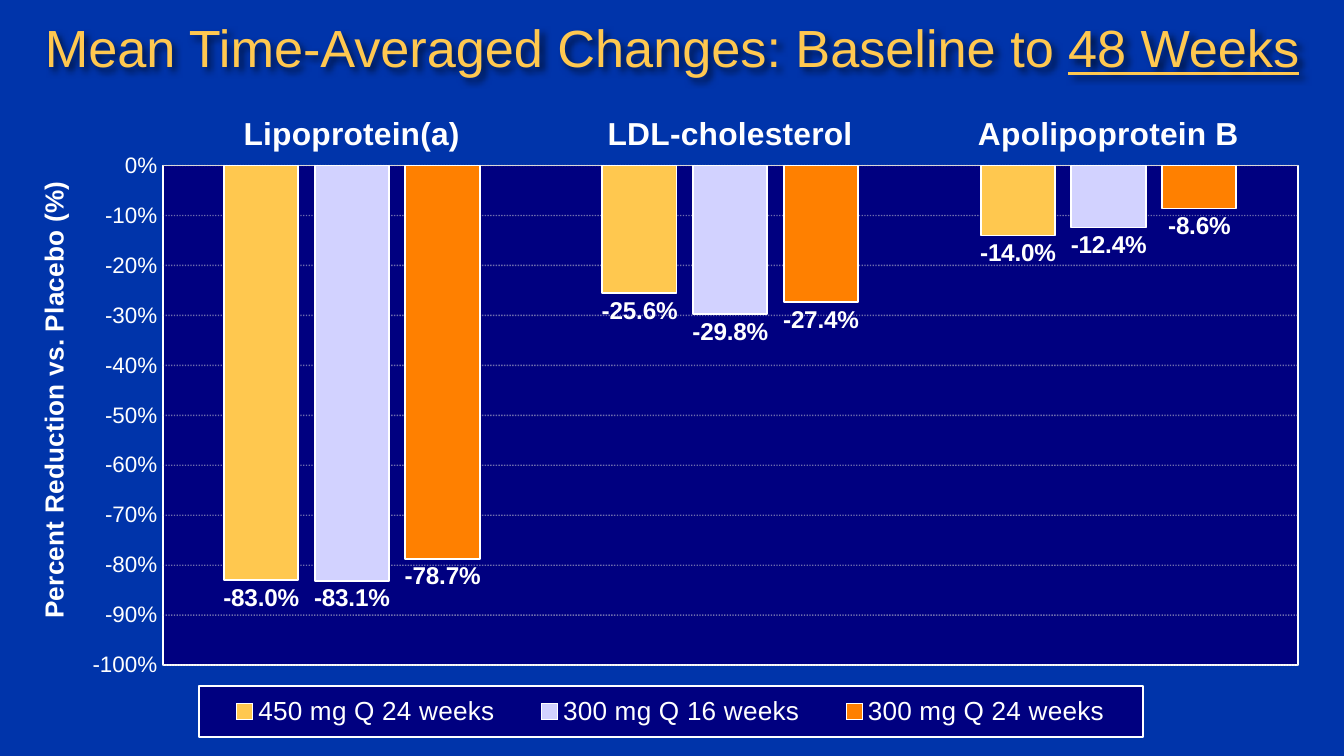
"""Build a slide with a clustered column chart of lipid changes over 48 weeks."""
from pptx import Presentation
from pptx.chart.data import CategoryChartData
from pptx.dml.color import RGBColor
from pptx.enum.chart import XL_CHART_TYPE as ChartType, XL_LABEL_POSITION as LabelPosition
from pptx.enum.chart import XL_LEGEND_POSITION as LegendPosition, XL_TICK_LABEL_POSITION as TickLabels
from pptx.enum.chart import XL_TICK_MARK as TickMark
from pptx.enum.dml import MSO_LINE as Dash
from pptx.enum.text import MSO_ANCHOR as Anchor, PP_ALIGN as Align
from pptx.oxml import parse_xml
from pptx.oxml.ns import nsdecls, qn
from pptx.util import Inches, Pt

WHITE, NAVY, GOLD, GRAY = "FFFFFF", "000080", "FFC850", "D9D9D9"
PANEL = (
    f'<c:spPr {nsdecls("c", "a")}><a:solidFill><a:srgbClr val="{NAVY}"/></a:solidFill>'
    f'<a:ln w="12700"><a:solidFill><a:srgbClr val="{WHITE}"/></a:solidFill></a:ln></c:spPr>'
)


def style_font(font, size, color=WHITE, bold=False):
    font.name, font.size, font.bold = "Arial", Pt(size), bold
    font.color.rgb = RGBColor.from_string(color)


def place(element, index, **shares):
    for layout in element.findall(qn("c:layout")):
        element.remove(layout)
    target = '<c:layoutTarget val="inner"/>' if element.tag == qn("c:plotArea") else ""
    modes = '<c:xMode val="edge"/><c:yMode val="edge"/>'
    values = "".join(f'<c:{name} val="{share}"/>' for name, share in shares.items())
    element.insert(index, parse_xml(
        f'<c:layout {nsdecls("c")}><c:manualLayout>{target}{modes}{values}</c:manualLayout></c:layout>'))


presentation = Presentation()
presentation.slide_width, presentation.slide_height = Inches(10), Inches(10 * 9 / 16)
width, height = presentation.slide_width, presentation.slide_height
slide = presentation.slides.add_slide(presentation.slide_layouts[6])
slide.background.fill.solid()
slide.background.fill.fore_color.rgb = RGBColor.from_string("0034AA")

doses = [
    ("450 mg Q 24 weeks", (-0.83, -0.256, -0.14), "FFC84F"),
    ("300 mg Q 16 weeks", (-0.831, -0.298, -0.124), "D2D2FF"),
    ("300 mg Q 24 weeks", (-0.787, -0.274, -0.086), "FF8000"),
]
chart_data = CategoryChartData(number_format="0.0%")
chart_data.categories = ["Lipoprotein(a)", "LDL-cholesterol", "Apolipoprotein B"]
for name, changes, color in doses:
    chart_data.add_series(name, changes)
chart = slide.shapes.add_chart(
    ChartType.COLUMN_CLUSTERED, int(width * 0.019), int(height * 0.131),
    int(width * 0.962), int(height * 0.854), chart_data).chart
chart.has_title = False
style_font(chart.font, 10, "000000")

plot = chart.plots[0]
plot.gap_width, plot.overlap, plot.vary_by_categories = 165, -22, False
for series, (name, changes, color) in zip(plot.series, doses):
    series.invert_if_negative = False
    series.format.fill.solid()
    series.format.fill.fore_color.rgb = RGBColor.from_string(color)
    series.format.line.color.rgb = RGBColor.from_string(WHITE)
    series.format.line.width = Pt(1)
    labels = series.data_labels
    labels.show_value = True
    labels.position = LabelPosition.OUTSIDE_END
    labels.number_format, labels.number_format_is_linked = "0.0%", False
    style_font(labels.font, 13, bold=True)

category_axis, value_axis = chart.category_axis, chart.value_axis
for axis in (category_axis, value_axis):
    axis.major_tick_mark = axis.minor_tick_mark = TickMark.NONE
category_axis.tick_label_position = TickLabels.HIGH
category_axis._element.find(qn("c:lblOffset")).set("val", "0")
category_axis.format.line.color.rgb = RGBColor.from_string(GRAY)
category_axis.format.line.width = Pt(0.75)
style_font(category_axis.tick_labels.font, 17, bold=True)

value_axis.minimum_scale, value_axis.maximum_scale, value_axis.major_unit = -1, 0, 0.1
value_axis.format.line.fill.background()
value_axis.tick_labels.number_format = "0%"
value_axis.tick_labels.number_format_is_linked = False
style_font(value_axis.tick_labels.font, 12)
value_axis.has_major_gridlines = True
gridline = value_axis.major_gridlines.format.line
gridline.color.rgb = RGBColor.from_string(GRAY)
gridline.width, gridline.dash_style = Pt(0.75), Dash.ROUND_DOT
for color in value_axis._element.find(qn("c:majorGridlines")).iter(qn("a:srgbClr")):
    color.append(parse_xml(f'<a:alpha {nsdecls("a")} val="51000"/>'))

axis_title = value_axis.axis_title
axis_title.text_frame.text = "Percent Reduction vs. Placebo (%)"
style_font(axis_title.text_frame.paragraphs[0].runs[0].font, 14, bold=True)
axis_title.text_frame._txBody.find(qn("a:bodyPr")).set("rot", "-5400000")
place(axis_title._element, 1, x=0.005, y=0.12)

chart.has_legend = True
legend = chart.legend
legend.position, legend.include_in_layout = LegendPosition.BOTTOM, False
style_font(legend.font, 14)
place(legend._element, 1, x=0.134, y=0.909, w=0.73, h=0.079)
legend._element.find(qn("c:overlay")).addnext(parse_xml(PANEL))
plot_area = chart._chartSpace.find(qn("c:chart")).find(qn("c:plotArea"))
place(plot_area, 0, x=0.106, y=0.103, w=0.878, h=0.774)
plot_area.append(parse_xml(PANEL))

title = slide.shapes.add_textbox(0, 0, width, int(height * 0.124))
title.text_frame.word_wrap = True
title.text_frame.vertical_anchor = Anchor.MIDDLE
paragraph = title.text_frame.paragraphs[0]
paragraph.alignment = Align.CENTER
for text, underlined in (("Mean Time-Averaged Changes: Baseline to ", False), ("48 Weeks", True)):
    run = paragraph.add_run()
    run.text = text
    style_font(run.font, 28, GOLD)
    run.font.underline = underlined
title._element.spPr.append(parse_xml(
    f'<a:effectLst {nsdecls("a")}><a:outerShdw blurRad="50800" dist="38100" dir="2700000">'
    '<a:srgbClr val="000000"><a:alpha val="60000"/></a:srgbClr></a:outerShdw></a:effectLst>'))

presentation.save("out.pptx")
